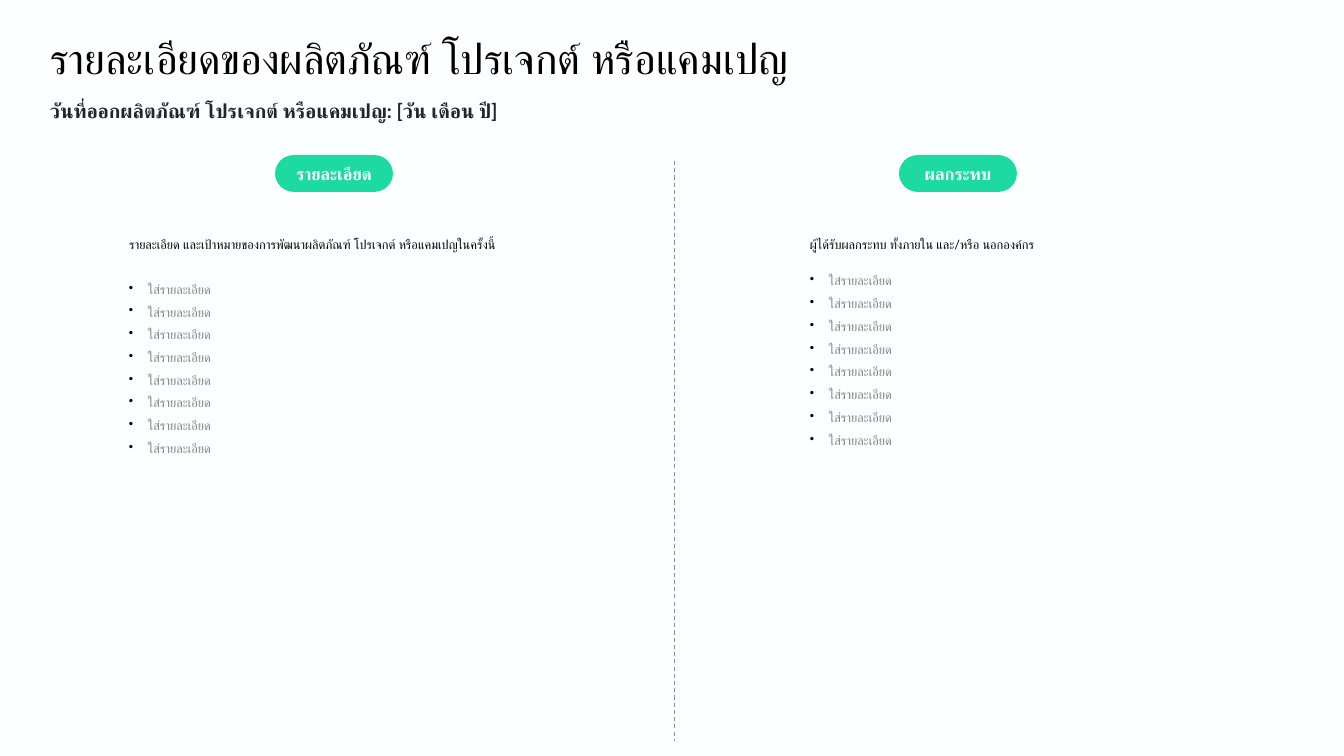
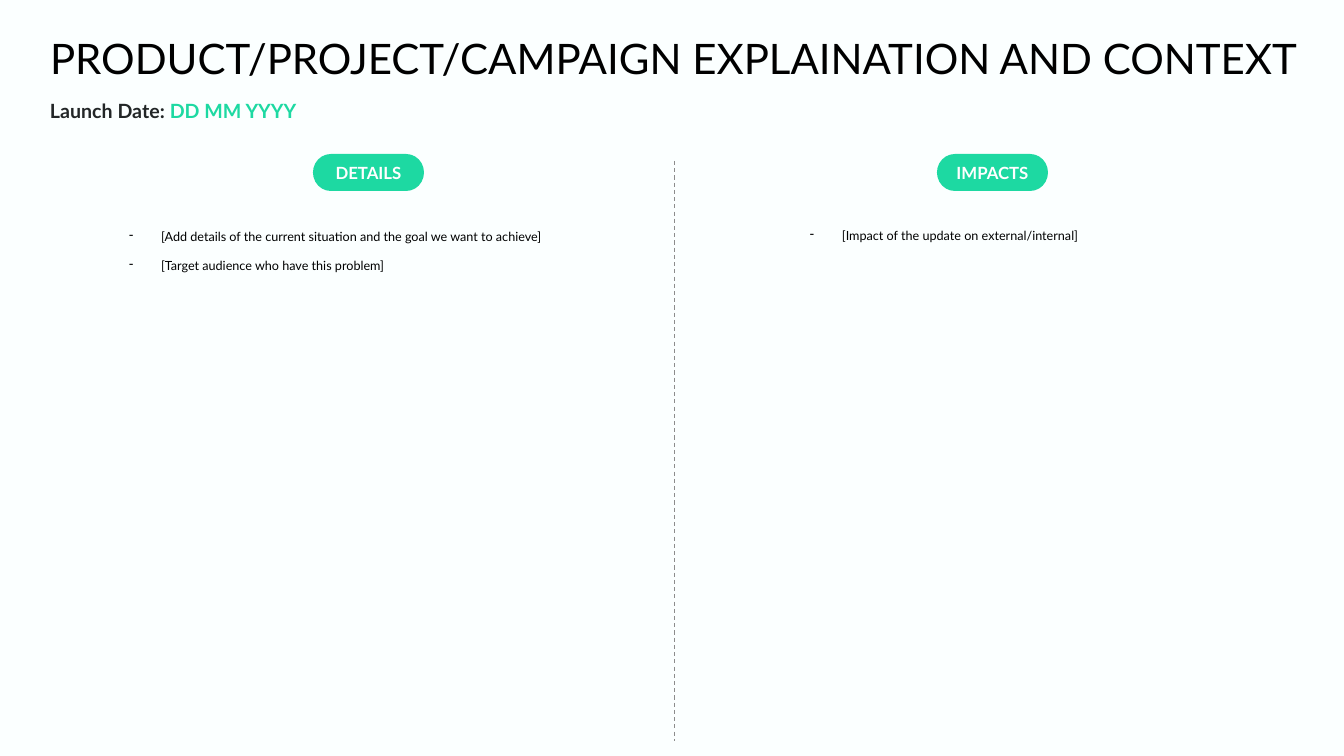
from dataclasses import dataclass, field

import pptx
import pptx.dml.color
import pptx.enum.dml
import pptx.enum.shapes
import pptx.enum.text
import pptx.oxml
import pptx.oxml.ns
import pptx.util

PX = 914400 / 100.8
ALIGN = pptx.enum.text.PP_ALIGN
ANCHOR = pptx.enum.text.MSO_ANCHOR
AUTO_SIZE = pptx.enum.text.MSO_AUTO_SIZE


@dataclass(frozen=True)
class Theme:
    font: str = "Lato"
    background: str = "FBFFFF"
    accent: str = "1DD9A2"
    text: str = "000000"
    dark: str = "222627"
    hint: str = "808080"
    divider: str = "8C8C8C"
    white: str = "FFFFFF"
    title_pt: int = 30
    subtitle_pt: int = 14
    pill_pt: int = 12
    body_pt: int = 9


THEME = Theme()


@dataclass(frozen=True)
class Box:
    x: int
    y: int
    w: int
    h: int

    def emu(self) -> list[pptx.util.Emu]:
        return [px(v) for v in (self.x, self.y, self.w, self.h)]


@dataclass(frozen=True)
class Run:
    text: str
    size: int = THEME.body_pt
    color: str = THEME.text
    bold: bool = False


@dataclass(frozen=True)
class Para:
    runs: list[Run]
    bullet: str = ""
    margin: int = 0
    indent: int = 0
    format: dict = field(default_factory=dict)


@dataclass(frozen=True)
class Column:
    heading: str
    pill: Box
    body: Box
    paras: list[Para]


@dataclass(frozen=True)
class Page:
    title: str
    subtitle: list[Run]
    columns: list[Column]


TITLE = Box(50, 42, 1254, 45)
SUBTITLE = Box(50, 89, 1268, 37)
DIVIDER = Box(675, 161, 0, 580)


def px(n: int) -> pptx.util.Emu:
    return pptx.util.Emu(round(n * PX))


def rgb(color: str) -> pptx.dml.color.RGBColor:
    return pptx.dml.color.RGBColor.from_string(color)


def add_xml(parent, tag: str, **attrs: str):
    """Append an empty DrawingML element."""
    el = pptx.oxml.parse_xml(f"<a:{tag} {pptx.oxml.ns.nsdecls('a')}/>")
    for name, value in attrs.items():
        el.set(name, value)
    parent.append(el)
    return el


def set_attrs(target, values: dict) -> None:
    for name, value in values.items():
        setattr(target, name, value)


def write_para(p, para: Para) -> None:
    pPr = p._p.get_or_add_pPr()
    pPr.set("marL", str(px(para.margin)))
    pPr.set("indent", str(px(para.indent)))
    if para.bullet:
        add_xml(add_xml(pPr, "buClr"), "srgbClr", val=THEME.text)
        add_xml(pPr, "buChar", char=para.bullet)
    set_attrs(p, para.format)
    for run in para.runs:
        r = p.add_run()
        r.text = run.text
        set_attrs(r.font, {"size": pptx.util.Pt(run.size), "bold": run.bold, "name": THEME.font})
        r.font.color.rgb = rgb(run.color)
        for script in ("ea", "cs"):
            add_xml(r.font._element, script, typeface=THEME.font)


def write_text(tf, paras: list[Para], margins: tuple[int, int, int, int],
               anchor=ANCHOR.TOP, auto_size=AUTO_SIZE.NONE) -> None:
    """Fill a text frame; margins run left, top, right, bottom."""
    set_attrs(tf, {"word_wrap": True, "auto_size": auto_size, "vertical_anchor": anchor})
    for side, margin in zip(("left", "top", "right", "bottom"), margins):
        setattr(tf, f"margin_{side}", px(margin))
    for i, para in enumerate(paras):
        write_para(tf.add_paragraph() if i else tf.paragraphs[0], para)


def add_text(s, box: Box, paras: list[Para], margins: tuple[int, int, int, int]) -> None:
    tf = s.shapes.add_textbox(*box.emu()).text_frame
    write_text(tf, paras, margins, auto_size=AUTO_SIZE.SHAPE_TO_FIT_TEXT)


def add_title(s, text: str) -> None:
    sp = s.shapes.title
    set_attrs(sp, dict(zip(("left", "top", "width", "height"), TITLE.emu())))
    para = Para([Run(text, THEME.title_pt)],
                format={"alignment": ALIGN.LEFT, "line_spacing": 0.8})
    write_text(sp.text_frame, [para], (0, 0, 0, 0))


def add_divider(s) -> None:
    x, y, w, h = DIVIDER.emu()
    line = s.shapes.add_connector(pptx.enum.shapes.MSO_CONNECTOR.STRAIGHT, x, y, x + w, y + h)
    line.line.color.rgb = rgb(THEME.divider)
    line.line.width = pptx.util.Pt(0.75)
    line.line.dash_style = pptx.enum.dml.MSO_LINE.DASH
    add_xml(line._element.spPr, "effectLst")


def add_pill(s, box: Box, text: str) -> None:
    sp = s.shapes.add_shape(pptx.enum.shapes.MSO_SHAPE.FLOWCHART_TERMINATOR, *box.emu())
    sp.shadow.inherit = False
    sp.fill.solid()
    sp.fill.fore_color.rgb = rgb(THEME.accent)
    sp.line.fill.background()
    para = Para([Run(text, THEME.pill_pt, THEME.white, True)],
                format={"alignment": ALIGN.CENTER})
    write_text(sp.text_frame, [para], (10, 5, 10, 5), ANCHOR.MIDDLE)


def add_page(prs, page: Page) -> None:
    s = prs.slides.add_slide(prs.slide_layouts.get_by_name("Title Only"))
    add_title(s, page.title)
    add_text(s, SUBTITLE, [Para(page.subtitle, format={"line_spacing": 1.2})], (0, 5, 10, 5))
    add_divider(s)
    for column in page.columns:
        add_pill(s, column.pill, column.heading)
        add_text(s, column.body, column.paras, (10, 10, 10, 10))


def hint_list(intro: str, gap: int) -> list[Para]:
    """An introductory line, a gap in points, and eight bulleted hints."""
    hint = Para([Run("ใส่รายละเอียด", color=THEME.hint)], "•", 37, -19, {"line_spacing": 1.5})
    lead = Para([Run(intro)], margin=18,
                format={"line_spacing": 1.5, "space_after": pptx.util.Pt(gap)})
    return [lead] + [hint] * 8


def dash_list(*items: str) -> list[Para]:
    return [Para([Run(item)], "-", 50, -32, {"space_before": pptx.util.Pt(10 if i else 0)})
            for i, item in enumerate(items)]


def subtitle_run(text: str, color: str = THEME.dark) -> Run:
    return Run(text, THEME.subtitle_pt, color, True)


PAGES = [
    Page(
        "รายละเอียดของผลิตภัณฑ์ โปรเจกต์ หรือแคมเปญ",
        [subtitle_run("วันที่ออกผลิตภัณฑ์ โปรเจกต์ หรือแคมเปญ: [วัน เดือน ปี]")],
        [
            Column("รายละเอียด", Box(275, 155, 118, 37), Box(101, 219, 535, 265),
                   hint_list("รายละเอียด และเป้าหมายของการพัฒนาผลิตภัณฑ์ โปรเจกต์ "
                             "หรือแคมเปญในครั้งนี้", 16)),
            Column("ผลกระทบ", Box(899, 155, 118, 37), Box(782, 219, 484, 241),
                   hint_list("ผู้ได้รับผลกระทบ ทั้งภายใน และ/หรือ นอกองค์กร", 10)),
        ],
    ),
    Page(
        "PRODUCT/PROJECT/CAMPAIGN EXPLAINATION AND CONTEXT",
        [subtitle_run("Launch Date: "), subtitle_run("DD MM YYYY", THEME.accent)],
        [
            Column("DETAILS", Box(313, 154, 111, 37), Box(101, 219, 535, 80),
                   dash_list("[Add details of the current situation and the goal "
                             "we want to achieve]",
                             "[Target audience who have this problem]")),
            Column("IMPACTS", Box(937, 154, 111, 37), Box(782, 220, 484, 49),
                   dash_list("[Impact of the update on external/internal]")),
        ],
    ),
]


def main() -> None:
    prs = pptx.Presentation()
    prs.slide_width, prs.slide_height = px(1344), px(756)
    fill = prs.slide_master.background.fill
    fill.solid()
    fill.fore_color.rgb = rgb(THEME.background)
    for page in PAGES:
        add_page(prs, page)
    prs.save("out.pptx")


if __name__ == "__main__":
    main()
